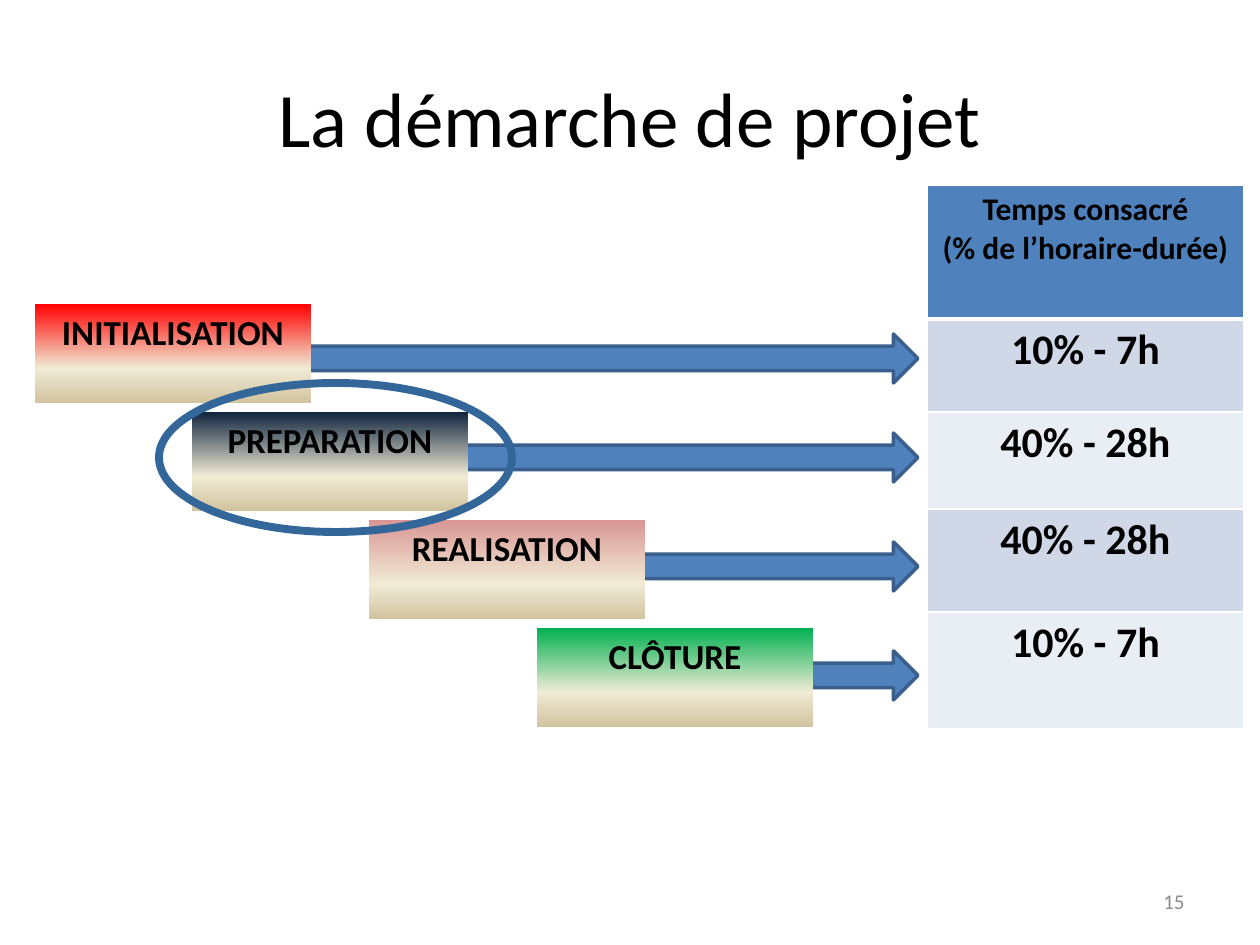
from dataclasses import dataclass
from lxml.etree import SubElement
from pptx import Presentation
from pptx.dml.color import RGBColor
from pptx.enum.shapes import MSO_SHAPE as Shape
from pptx.enum.text import MSO_ANCHOR as Anchor, PP_ALIGN as Align
from pptx.oxml import parse_xml
from pptx.oxml.ns import nsdecls, qn
from pptx.util import Emu, Pt

# Content
TITLE = "La démarche de projet"
PAGE_NUMBER = "15"
STAGES = [  # label, left, top colour, arrow left, arrow top
    ("INITIALISATION", 35, "FF0000", 273, 334),
    ("PREPARATION", 192, "0F243E", 412, 433),
    ("REALISATION", 369, "D99694", 630, 542),
    ("CLÔTURE", 537, "00B050", 759, 651),
]
TIME_ROWS = [  # lines, height
    (["Temps consacré", "(% de l’horaire-durée)"], 134),
    (["10% - 7h"], 93),
    (["40% - 28h"], 97),
    (["40% - 28h"], 103),
    (["10% - 7h"], 117),
]


@dataclass(frozen=True)
class Theme:
    font: str = "Calibri"
    ink: str = "000000"
    muted: str = "8C8C8C"
    accent: str = "4F81BD"
    arrow_line: str = "3A5F8C"
    ring: str = "336699"
    white: str = "FFFFFF"
    bands: tuple = ("D0D8E8", "E9EDF4")
    sand: tuple = ((65, "F0EBD5"), (100, "D1C39F"))
    title: int = 44
    figure: int = 24
    stage: int = 20
    header: int = 18
    small: int = 12


THEME = Theme()

# Layout in px
SLIDE_SIZE = (1260, 945)
STAGE_TOP, STAGE_STEP, STAGE_WIDTH, STAGE_HEIGHT = 304, 108, 276, 99
ARROW_RIGHT, ARROW_HEIGHT = 918, 49
TABLE_LEFT, TABLE_TOP, TABLE_WIDTH = 927, 185, 317
CELL_INSET = 6


def px(value):
    return Emu(round(value * 914400 / 126))


def place(*lengths):
    return [px(length) for length in lengths]


def rgb(colour):
    return RGBColor.from_string(colour)


def write(frame, lines, size, colour=THEME.ink, bold=False, align=Align.CENTER):
    for index, line in enumerate(lines):
        para = frame.paragraphs[0] if index == 0 else frame.add_paragraph()
        para.alignment = align
        span = para.add_run()
        span.text = line
        span.font.name = THEME.font
        span.font.size = Pt(size)
        span.font.bold = bold
        span.font.color.rgb = rgb(colour)


def add_text(page, bounds, text, size, **style):
    frame = page.shapes.add_textbox(*place(*bounds)).text_frame
    frame.word_wrap = True
    frame.vertical_anchor = Anchor.MIDDLE
    write(frame, [text], size, **style)


def outline(shape, colour, width):
    shape.shadow.inherit = False
    shape.line.color.rgb = rgb(colour)
    shape.line.width = Pt(width)


def fill_downward(shape, stops):
    marks = "".join(
        f'<a:gs pos="{at * 1000}"><a:srgbClr val="{colour}"/></a:gs>'
        for at, colour in stops)
    gradient = parse_xml(
        f'<a:gradFill {nsdecls("a")} rotWithShape="1"><a:gsLst>{marks}</a:gsLst>'
        '<a:lin ang="5400000" scaled="0"/></a:gradFill>')
    shape.element.spPr.find(qn("a:prstGeom")).addnext(gradient)


def set_borders(cell, bottom):
    properties = cell._tc.get_or_add_tcPr()
    widths = {"lnL": 1, "lnR": 1, "lnT": 1, "lnB": bottom}
    for index, (side, width) in enumerate(widths.items()):
        line = parse_xml(f'<a:{side} {nsdecls("a")} w="{Pt(width)}"/>')
        solid = SubElement(line, qn("a:solidFill"))
        SubElement(solid, qn("a:srgbClr")).set("val", THEME.white)
        properties.insert(index, line)


def add_arrows(page):
    for _, _, _, left, top in reversed(STAGES):
        arrow = page.shapes.add_shape(
            Shape.RIGHT_ARROW, *place(left, top, ARROW_RIGHT - left, ARROW_HEIGHT))
        arrow.fill.solid()
        arrow.fill.fore_color.rgb = rgb(THEME.accent)
        outline(arrow, THEME.arrow_line, 2)


def add_stages(page):
    group = page.shapes.add_group_shape()
    for index, (label, left, colour, _, _) in enumerate(STAGES):
        top = STAGE_TOP + index * STAGE_STEP
        box = group.shapes.add_shape(
            Shape.RECTANGLE, *place(left, top, STAGE_WIDTH, STAGE_HEIGHT))
        box.shadow.inherit = False
        box.line.fill.background()
        fill_downward(box, ((0, colour), *THEME.sand))
        box.text_frame.word_wrap = True
        box.text_frame.vertical_anchor = Anchor.TOP
        write(box.text_frame, [label], THEME.stage, bold=True)


def add_time_table(page):
    height = sum(row_height for _, row_height in TIME_ROWS)
    bounds = place(TABLE_LEFT, TABLE_TOP, TABLE_WIDTH, height)
    table = page.shapes.add_table(len(TIME_ROWS), 1, *bounds).table
    for index, (lines, row_height) in enumerate(TIME_ROWS):
        table.rows[index].height = px(row_height)
        cell = table.cell(index, 0)
        is_header = index == 0
        cell.margin_left = cell.margin_right = 0
        cell.margin_top = cell.margin_bottom = px(CELL_INSET)
        cell.fill.solid()
        cell.fill.fore_color.rgb = rgb(
            THEME.accent if is_header else THEME.bands[(index - 1) % 2])
        set_borders(cell, 3 if is_header else 1)
        write(cell.text_frame, lines,
              THEME.header if is_header else THEME.figure, bold=True)


def main():
    deck = Presentation()
    deck.slide_width, deck.slide_height = place(*SLIDE_SIZE)
    page = deck.slides.add_slide(deck.slide_layouts[6])

    # Stages and their time
    add_arrows(page)
    add_text(page, (63, 38, 1134, 158), TITLE, THEME.title)
    add_stages(page)
    add_time_table(page)

    # Ring around the current stage
    ring = page.shapes.add_shape(Shape.OVAL, *place(159, 383, 353, 149))
    ring.fill.background()
    outline(ring, THEME.ring, 4.5)

    # Page number
    add_text(page, (903, 876, 294, 50), PAGE_NUMBER, THEME.small,
             colour=THEME.muted, align=Align.RIGHT)
    deck.save("out.pptx")


if __name__ == "__main__":
    main()
